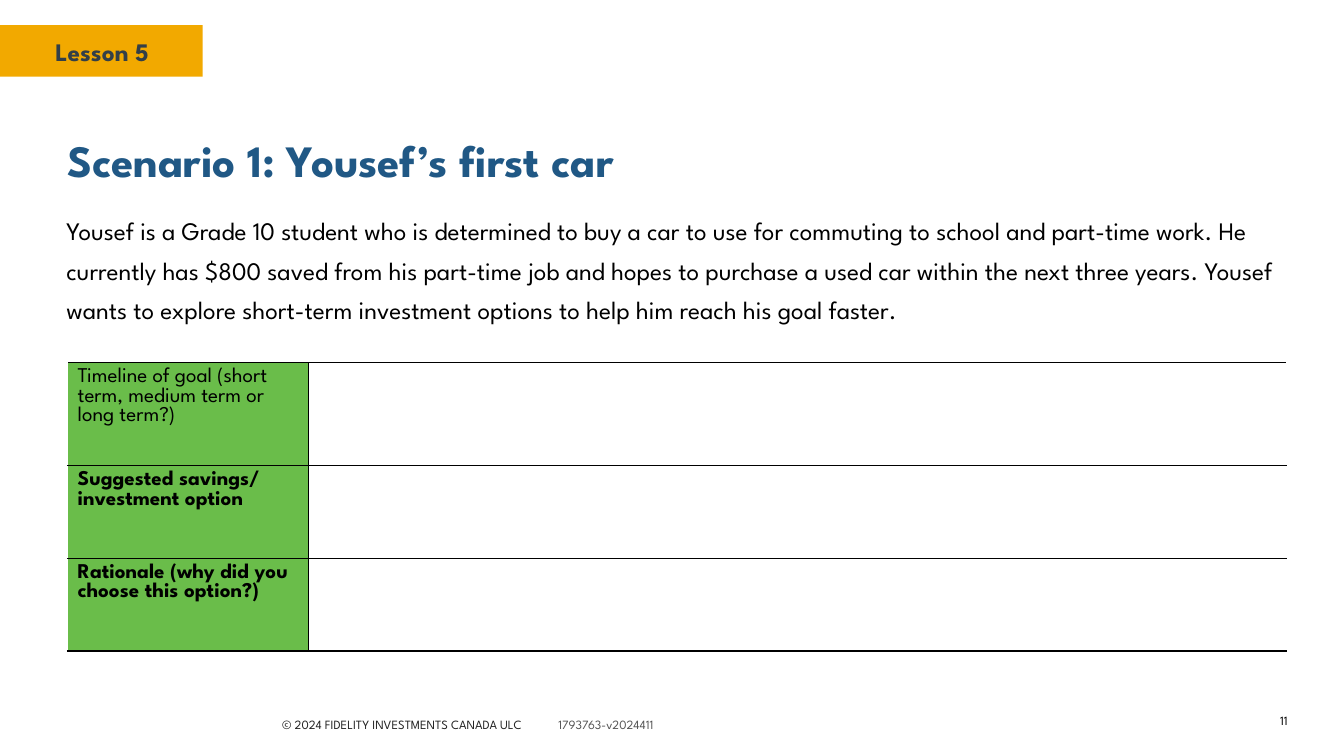
from lxml import etree
from pptx import Presentation, util as u
from pptx.dml.color import RGBColor
from pptx.enum import shapes, text
from pptx.oxml import ns

WIDE, HIGH = 13.33, 7.5
FONT = "League Spartan"
BLACK, WHITE, GOLD, GREEN = "000000", "FFFFFF", "F2A900", "6ABD4A"
STORY = (
    "Yousef is a Grade 10 student who is determined to buy a car to use for "
    "commuting to school and part-time work. He currently has $800 saved from "
    "his part-time job and hopes to purchase a used car within the next three "
    "years. Yousef wants to explore short-term investment options to help him "
    "reach his goal faster."
)
ROWS = [
    (1.02, False, ["Timeline of goal (short term, medium term or long term?)"]),
    (0.92, True, ["Suggested savings/", "investment option"]),
    (0.92, True, ["Rationale (why did you choose this option?)"]),
]


def tint(code):
    """Turn a hex string into a colour."""
    return RGBColor.from_string(code)


def box(area):
    """Turn left, top, width and height in inches into lengths."""
    return [u.Inches(n) for n in area]


def style(font, size=18, color=BLACK, bold=False):
    """Set the look of a font."""
    font.name, font.size, font.bold = FONT, u.Pt(size), bold
    font.color.rgb = tint(color)


def write(frame, lines, align=text.PP_ALIGN.LEFT, space=1.0, **look):
    """Fill a text frame; each line is a list of runs with their colours."""
    for i, line in enumerate(lines):
        para = frame.paragraphs[0] if i == 0 else frame.add_paragraph()
        para.alignment, para.line_spacing = align, space
        runs = [(line, look.get("color", BLACK))] if isinstance(line, str) else line
        for words, color in runs:
            run = para.add_run()
            run.text = words
            style(run.font, **{**look, "color": color})


def label(slide, area, *lines, anchor=text.MSO_ANCHOR.TOP, **look):
    """Add a wrapped text box and return its frame."""
    frame = slide.shapes.add_textbox(*box(area)).text_frame
    frame.word_wrap, frame.vertical_anchor = True, anchor
    write(frame, lines, **look)
    return frame


def band(slide, area, color):
    """Add a plain filled rectangle."""
    shape = slide.shapes.add_shape(shapes.MSO_SHAPE.RECTANGLE, *box(area))
    shape.shadow.inherit = False
    shape.fill.solid()
    shape.fill.fore_color.rgb = tint(color)
    shape.line.fill.background()


def edge(cell, **sides):
    """Draw one-point cell borders, given as side=colour."""
    props = cell._tc.get_or_add_tcPr()
    for side, color in sides.items():
        line = etree.SubElement(props, ns.qn("a:ln" + side), w=str(u.Pt(1)))
        fill = etree.SubElement(line, ns.qn("a:solidFill"))
        etree.SubElement(fill, ns.qn("a:srgbClr"), val=color)


def stop(para, place):
    """Set a left tab stop in inches."""
    tabs = etree.SubElement(para._p.get_or_add_pPr(), ns.qn("a:tabLst"))
    etree.SubElement(tabs, ns.qn("a:tab"), pos=str(u.Inches(place)), algn="l")


def grid(slide, left, top, cols):
    """Add the answer table with green prompts and open cells."""
    tall = sum(row[0] for row in ROWS)
    area = box((left, top, sum(cols), tall))
    table = slide.shapes.add_table(len(ROWS), len(cols), *area).table
    table.first_row = table.horz_banding = False
    for col, width in zip(table.columns, cols):
        col.width = u.Inches(width)
    for i, (high, bold, lines) in enumerate(ROWS):
        table.rows[i].height = u.Inches(high)
        ask, reply = table.cell(i, 0), table.cell(i, 1)
        edge(ask, L=WHITE, R=BLACK, T=BLACK, B=BLACK)
        edge(reply, L=BLACK, R=WHITE, T=BLACK, B=BLACK)
        ask.fill.solid()
        ask.fill.fore_color.rgb = tint(GREEN)
        reply.fill.background()
        write(ask.text_frame, lines, size=15, bold=bold)


def main():
    """Build and save the slide."""
    deck = Presentation()
    deck.slide_width, deck.slide_height = u.Inches(WIDE), u.Inches(HIGH)
    slide = deck.slides.add_slide(deck.slide_layouts[6])
    band(slide, (0, 0.25, 2.01, 0.51), GOLD)
    label(slide, (0.45, 0.31, 1.31, 0.4), "Lesson 5", color="333F48", bold=True)
    label(slide, (0.57, 1.27, 12.2, 0.73), "Scenario 1: Yousef’s first car",
          size=32, color="205885", bold=True)
    label(slide, (0.56, 2, 12.2, 1.31), STORY, space=1.3)
    grid(slide, 0.67, 3.6, (2.39, 9.7))
    credit = [("© 2024 FIDELITY INVESTMENTS CANADA ULC\t", "222222"),
              ("1793763-v2024411", "545454")]
    foot = label(slide, (2.7, 7.06, 4.3, 0.25), credit, size=9)
    stop(foot.paragraphs[0], 2.74)
    label(slide, (12.17, 7.06, 0.7, 0.18), "11", size=9,
          align=text.PP_ALIGN.RIGHT, anchor=text.MSO_ANCHOR.MIDDLE)
    deck.save("out.pptx")


if __name__ == "__main__":
    main()
